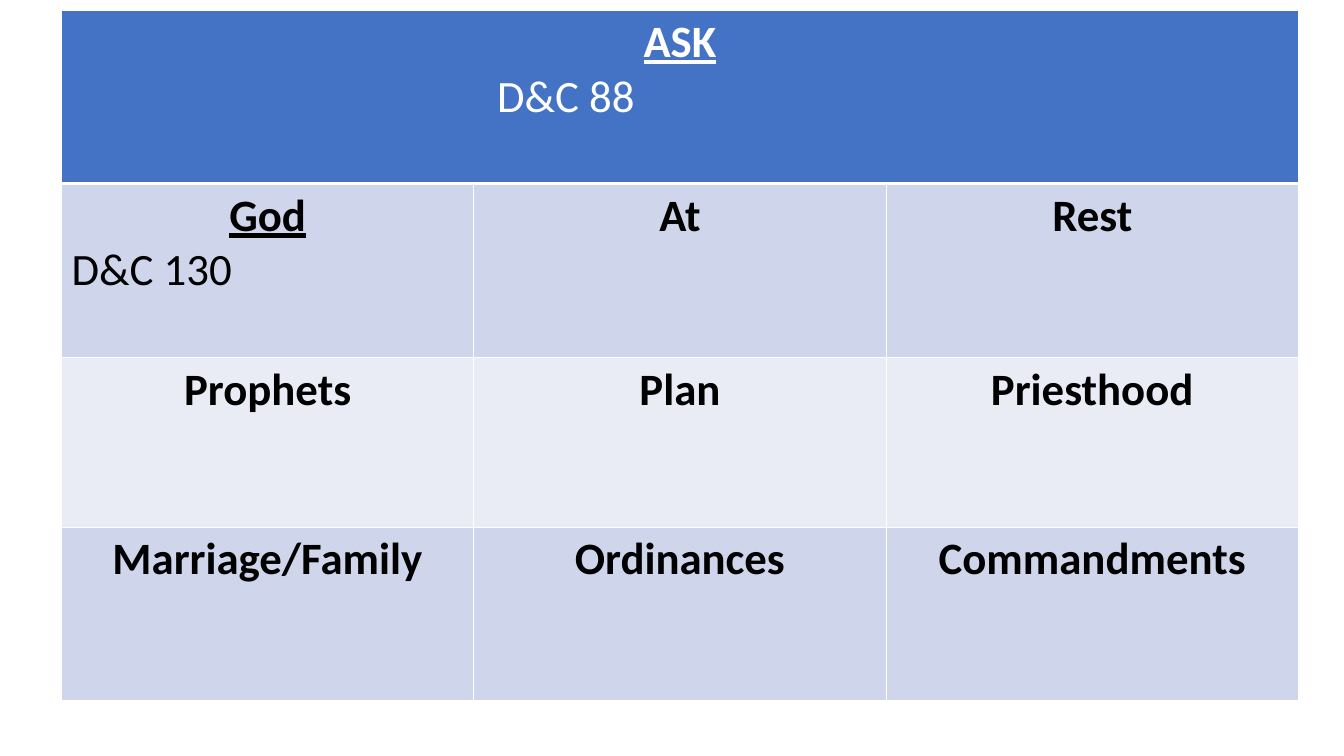
import pptx
import pptx.dml.color
import pptx.enum.text
import pptx.oxml
import pptx.oxml.ns
import pptx.util

Inches = pptx.util.Inches
Pt = pptx.util.Pt
RGBColor = pptx.dml.color.RGBColor
CENTER = pptx.enum.text.PP_ALIGN.CENTER
LEFT = pptx.enum.text.PP_ALIGN.LEFT

WHITE = RGBColor(0xFF, 0xFF, 0xFF)
BLACK = RGBColor(0, 0, 0)
BLUE = RGBColor(0x44, 0x72, 0xC4)
DARK_BAND = RGBColor(0xCF, 0xD5, 0xEA)
LIGHT_BAND = RGBColor(0xE9, 0xEB, 0xF5)

COLUMN_WIDTH = 4.09
ROW_HEIGHTS = [1.72, 1.73, 1.68, 1.72]
TOPICS = [
    ["ASK", "", ""],
    ["God", "At", "Rest"],
    ["Prophets", "Plan", "Priesthood"],
    ["Marriage/Family", "Ordinances", "Commandments"],
]
# Topic: (scripture reference, left indent in inches)
REFERENCES = {"ASK": ("D&C 88", 4.22), "God": ("D&C 130", 0)}


def write(p, text, color=BLACK, bold=False, underline=False, align=LEFT, indent=0):
    p.alignment = align
    if indent:
        p._p.get_or_add_pPr().set("marL", str(Inches(indent)))
    r = p.add_run()
    r.text = text
    r.font.name = "Calibri"
    r.font.size = Pt(32)
    r.font.bold = bold
    r.font.underline = underline
    r.font.color.rgb = color


def add_borders(cell, bottom=1):
    tc_pr = cell._tc.get_or_add_tcPr()
    for side, width in (("L", 1), ("R", 1), ("T", 1), ("B", bottom)):
        tc_pr.append(pptx.oxml.parse_xml(
            f'<a:ln{side} {pptx.oxml.ns.nsdecls("a")} w="{Pt(width)}">'
            f'<a:solidFill><a:srgbClr val="{WHITE}"/></a:solidFill></a:ln{side}>'))


def format_cell(cell, fill, bottom=1):
    add_borders(cell, bottom)
    cell.fill.solid()
    cell.fill.fore_color.rgb = fill


def write_topic(cell, topic, color):
    """Write the centred topic and, below it, its reference if it has one."""
    tf = cell.text_frame
    write(tf.paragraphs[0], topic, color=color, bold=True,
          underline=topic in REFERENCES, align=CENTER)
    if topic in REFERENCES:
        reference, indent = REFERENCES[topic]
        write(tf.add_paragraph(), reference, color=color, indent=indent)


def add_topic_table(s):
    rows, columns = len(TOPICS), len(TOPICS[0])
    table = s.shapes.add_table(
        rows, columns, Inches(0.61), Inches(0.1),
        Inches(columns * COLUMN_WIDTH), Inches(sum(ROW_HEIGHTS))).table
    for column in table.columns:
        column.width = Inches(COLUMN_WIDTH)
    for row, height in zip(table.rows, ROW_HEIGHTS):
        row.height = Inches(height)
    table.cell(0, 0).merge(table.cell(0, columns - 1))

    for i, topics in enumerate(TOPICS):
        header = i == 0
        fill = BLUE if header else DARK_BAND if i % 2 else LIGHT_BAND
        for j, topic in enumerate(topics):
            cell = table.cell(i, j)
            format_cell(cell, fill, bottom=3 if header else 1)
            if topic:
                write_topic(cell, topic, WHITE if header else BLACK)


def main():
    prs = pptx.Presentation()
    prs.slide_width = Inches(13.33)
    prs.slide_height = Inches(7.5)
    s = prs.slides.add_slide(prs.slide_layouts[6])
    add_topic_table(s)
    prs.save("out.pptx")


if __name__ == "__main__":
    main()
